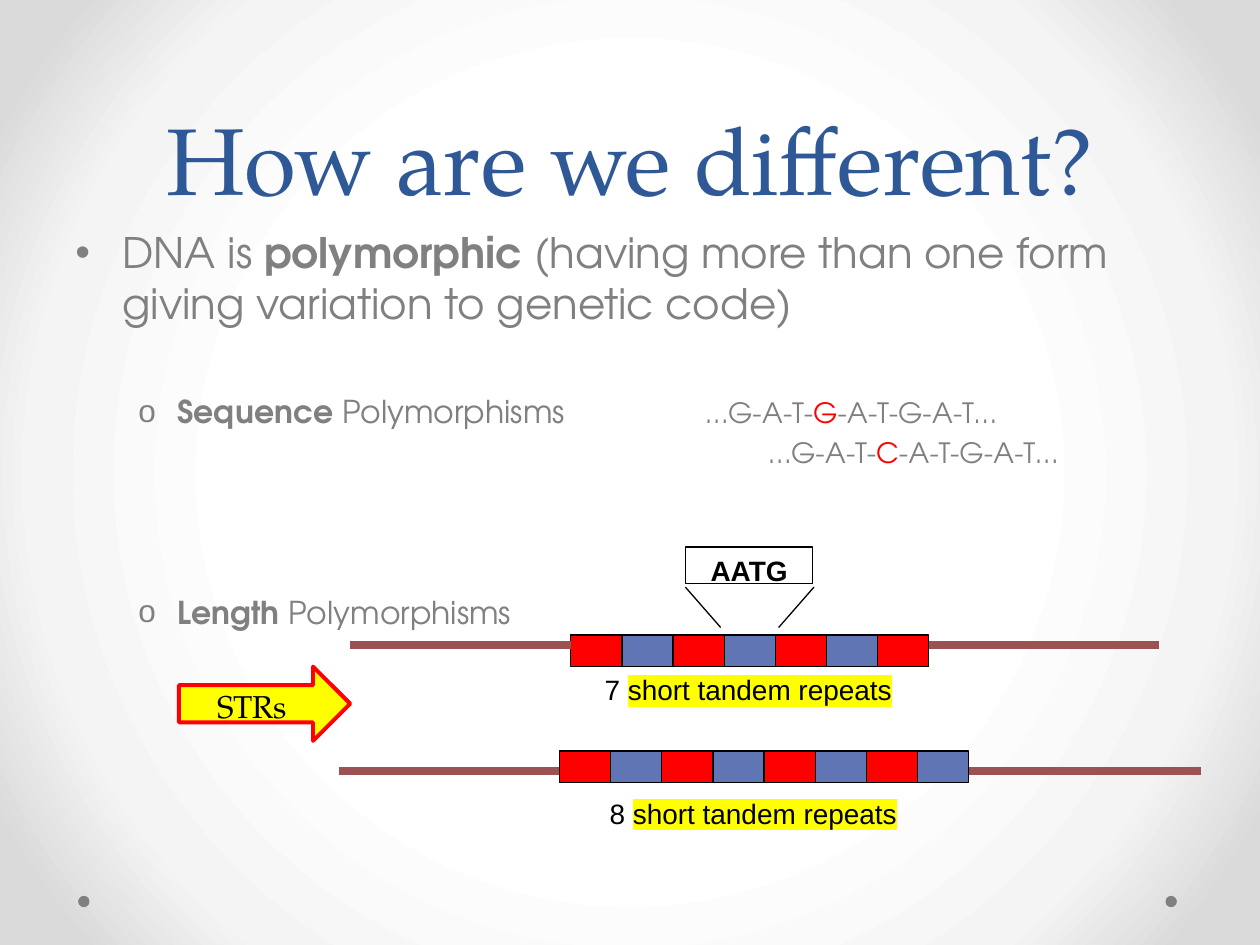
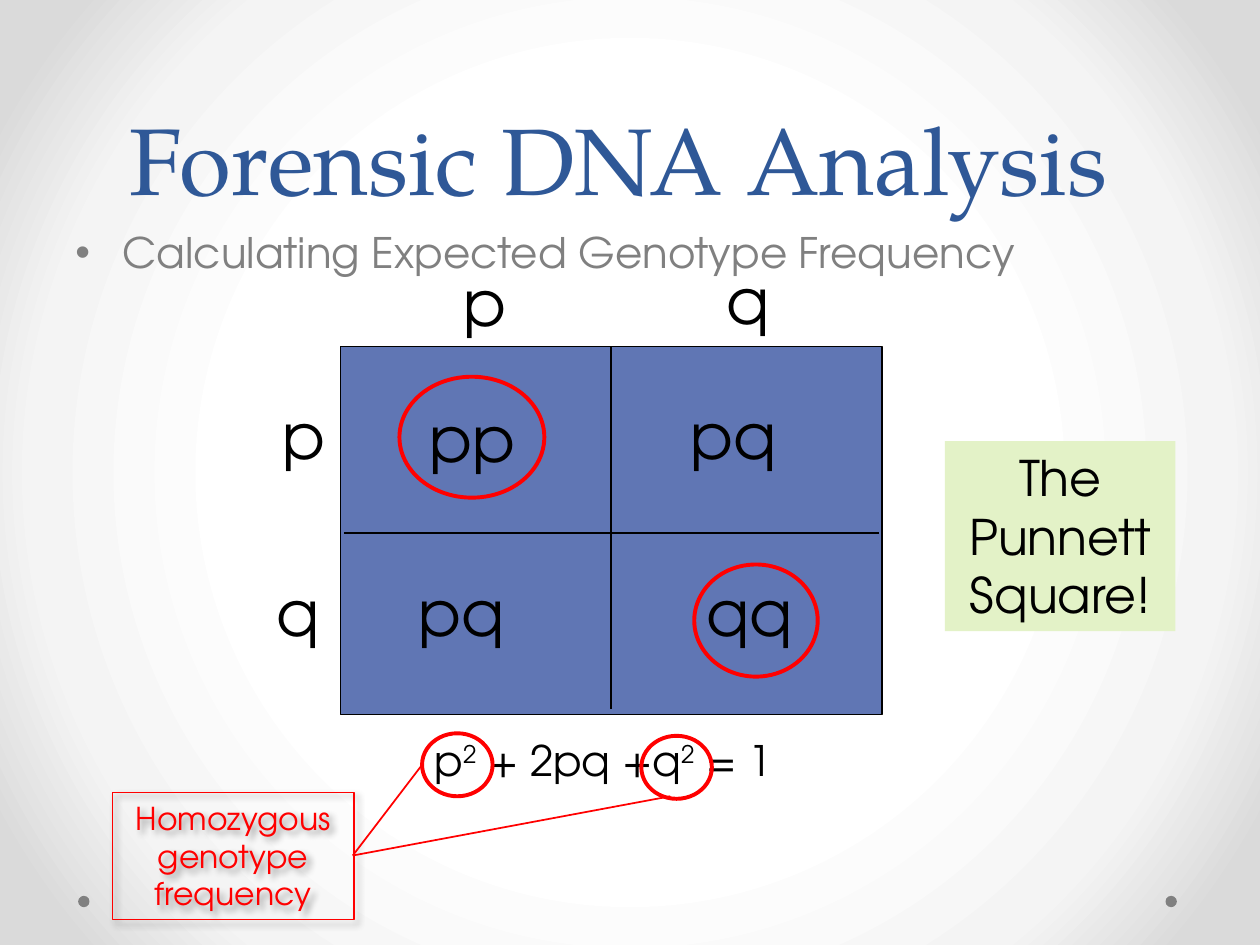
from lxml.etree import SubElement
from pptx import Presentation
from pptx.dml.color import RGBColor
from pptx.enum.shapes import MSO_CONNECTOR as Link, MSO_SHAPE as Shape
from pptx.enum.text import MSO_ANCHOR as Anchor, PP_ALIGN as Align
from pptx.oxml.ns import qn
from pptx.util import Inches, Pt

COLORS = {
    "title": "2F5897", "body": "808080", "ink": "000000", "red": "FF0000",
    "blue": "6076B4", "strand": "9C5252", "yellow": "FFFF00", "green": "E3F2C7",
    "center": "FFFFFF", "halo": "F4F4F4", "edge": "DADADA",
}
SERIF, SANS, PLAIN = "TeX Gyre Pagella", "TeX Gyre Adventor", "Arial"
COLUMNS, ROWS = 100, 75


def child(parent, tag, **attributes):
    return SubElement(parent, qn(tag), {k: str(v) for k, v in attributes.items()})


def add_text(paragraph, text, size=16, font=SANS, color="ink", bold=None,
             raised=False, highlight=None):
    run = paragraph.add_run()
    run.text = text
    run.font.size = Pt(size)
    run.font.bold = bold
    run.font.color.rgb = RGBColor.from_string(COLORS[color])
    properties = run.font._element
    if raised:
        properties.set("baseline", "30000")
    if highlight:
        child(child(properties, "a:highlight"), "a:srgbClr", val=COLORS[highlight])
    run.font.name = font


class Deck:
    """Holds the shared style, the grid and the slide being filled."""

    def __init__(self):
        self.prs = Presentation()
        self.prs.slide_width, self.prs.slide_height = Inches(10), Inches(7.5)
        self.column = self.prs.slide_width / COLUMNS
        self.row = self.prs.slide_height / ROWS
        self.slide = None
        self.paint_background()

    def paint_background(self):
        fill = self.prs.slide_master.background.fill
        fill.gradient()
        gradient = self.prs.slide_master._element.find(".//" + qn("a:gradFill"))
        for part in list(gradient):
            gradient.remove(part)
        stops = child(gradient, "a:gsLst")
        for position, color in ((50, "center"), (76, "halo"), (92, "edge")):
            stop = child(stops, "a:gs", pos=position * 1000)
            child(stop, "a:srgbClr", val=COLORS[color])
        path = child(gradient, "a:path", path="circle")
        child(path, "a:fillToRect", l=50000, t=50000, r=50000, b=50000)

    def place(self, x, y):
        return round(x * self.column), round(y * self.row)

    def new_slide(self, title):
        self.slide = self.prs.slides.add_slide(self.prs.slide_layouts[6])
        for x in (6.2, 92.5):
            self.shape(Shape.OVAL, x, 71.1, 0.9, 0.9, fill="body")
        heading = self.text(5, 0, 90, 17.5, title, size=54, font=SERIF,
                            color="title", align=Align.CENTER)
        heading.vertical_anchor = Anchor.BOTTOM
        heading.paragraphs[0].line_spacing = Pt(58)

    def shape(self, kind, x, y, width, height, fill=None, line=None, weight=0.75):
        shape = self.slide.shapes.add_shape(
            kind, *self.place(x, y), *self.place(width, height))
        shape.shadow.inherit = False
        if fill:
            shape.fill.solid()
            shape.fill.fore_color.rgb = RGBColor.from_string(COLORS[fill])
        else:
            shape.fill.background()
        if line:
            shape.line.color.rgb = RGBColor.from_string(COLORS[line])
            shape.line.width = Pt(weight)
        else:
            shape.line.fill.background()
        return shape

    def ring(self, x, y, width, height):
        self.shape(Shape.OVAL, x, y, width, height, line="red", weight=2.25)

    def line(self, start, end, color="ink", weight=0.75):
        line = self.slide.shapes.add_connector(
            Link.STRAIGHT, *self.place(*start), *self.place(*end))
        line.line.color.rgb = RGBColor.from_string(COLORS[color])
        line.line.width = Pt(weight)
        child(line._element.spPr, "a:effectLst")

    def frame(self, x, y, width, height):
        frame = self.slide.shapes.add_textbox(
            *self.place(x, y), *self.place(width, height)).text_frame
        frame.word_wrap = True
        return frame

    def text(self, x, y, width, height, text, align=Align.LEFT, **style):
        frame = self.frame(x, y, width, height)
        frame.paragraphs[0].alignment = align
        add_text(frame.paragraphs[0], text, **style)
        return frame

    def label(self, shape, text, **style):
        """Write centred text into a shape, from its top edge."""
        frame = shape.text_frame
        frame.word_wrap = True
        frame.vertical_anchor = Anchor.TOP
        frame.paragraphs[0].alignment = Align.CENTER
        add_text(frame.paragraphs[0], text, **style)

    def item(self, paragraph, *runs, size=24, before=5, margin=3.75, hang=3.75,
             bullet=None, tab=None, level=0):
        """Fill a body paragraph; each run is its text and its own format."""
        paragraph.level = level
        paragraph.space_before = Pt(before)
        properties = paragraph._p.get_or_add_pPr()
        properties.set("marL", str(round(margin * self.column)))
        properties.set("indent", str(-round(hang * self.column)))
        if bullet:
            child(properties, "a:buFont", typeface=PLAIN)
            child(properties, "a:buChar", char=bullet)
        if tab:
            child(child(properties, "a:tabLst"), "a:tab",
                  pos=round(tab * self.column), algn="l")
        for text, style in runs:
            add_text(paragraph, text, **{"size": size, "color": "body", **style})

    def strand(self, x, y, repeats, line_drop, right_flank):
        """A DNA strand with alternating repeat units between two flanks."""
        unit, left_flank = 4.06, 17.5
        for index in range(repeats):
            self.shape(Shape.RECTANGLE, x + index * unit, y, unit, 2.5,
                       fill=("red", "blue")[index % 2], line="ink")
        line_y, end = y + line_drop, x + repeats * unit
        for start, stop in ((x - left_flank, x), (end, end + right_flank)):
            self.line((start, line_y), (stop, line_y), "strand", 4.5)


def bases(variant):
    """Runs of a base sequence with its varying base in red."""
    return [("…G-A-T-", {"size": 16}),
            (variant, {"size": 16, "color": "red"}),
            ("-A-T-G-A-T…", {"size": 16})]


def polymorphism_slide(deck):
    deck.new_slide("How are we different?")
    body = deck.frame(5, 17.5, 92.5, 55)
    bold = {"bold": True}
    sub = {"size": 18, "margin": 8.1, "hang": 3.1, "bullet": "o", "level": 1}
    deck.item(body.paragraphs[0], ("DNA is ", {}), ("polymorphic", bold),
              (" (having more than one form giving variation to genetic code)", {}),
              bullet="•")
    deck.item(body.add_paragraph(), ("Sequence", bold), (" Polymorphisms", {}),
              ("\t", {"size": 16}), *bases("G"), before=37, tab=50, **sub)
    deck.item(body.add_paragraph(), *bases("C"), before=3, margin=55, hang=0, level=1)
    deck.item(body.add_paragraph(), ("Length", bold), (" Polymorphisms", {}),
              before=71, **sub)

    deck.strand(45.3, 50.4, 7, line_drop=0.8, right_flank=18.3)
    deck.strand(44.4, 59.6, 8, line_drop=1.6, right_flank=18.4)
    for x, y, count in ((47, 52.9, "7 "), (47.4, 62.7, "8 ")):
        caption = deck.text(x, y, 28.3, 3.7, count, font=PLAIN)
        add_text(caption.paragraphs[0], "short tandem repeats", font=PLAIN,
                 highlight="yellow")

    motif = deck.shape(Shape.RECTANGLE, 54.4, 43.4, 10.1, 2.9, line="ink")
    deck.label(motif, "AATG", font=PLAIN, bold=True)
    deck.line((54.4, 46.6), (57.2, 49.8))
    deck.line((64.6, 46.6), (61.8, 49.8))
    deck.shape(Shape.RIGHT_ARROW, 14.2, 52.9, 13.6, 5.9, fill="yellow",
               line="red", weight=2.25)
    deck.text(16.3, 54, 8.3, 4, "STRs", size=18, font=SERIF)


def punnett_slide(deck):
    deck.new_slide("Forensic DNA Analysis ")
    body = deck.frame(5, 17.5, 90, 49.5)
    deck.item(body.paragraphs[0], ("Calculating Expected Genotype Frequency", {}),
              bullet="•")

    deck.shape(Shape.RECTANGLE, 27, 27.5, 43, 29.2, fill="blue", line="ink")
    deck.line((27.3, 42.3), (69.8, 42.3))
    deck.line((48.5, 27.5), (48.5, 56.3))
    alleles = (("p", 35.8, 20.4), ("q", 56.7, 20.3), ("p", 21.4, 31), ("q", 21, 45))
    genotypes = (("pp", 33.1, 31.2), ("qq", 55.1, 45), ("pq", 53.8, 31), ("pq", 32.2, 45))
    for width, letters in ((6.7, alleles), (12.4, genotypes)):
        for letter, x, y in letters:
            deck.text(x, y, width, 7.1, letter, size=36)

    equation = deck.text(33.5, 57.8, 31.9, 5, "p", size=24).paragraphs[0]
    for term, raised in (("2", True), (" + 2pq +q", False), ("2", True), (" = 1", False)):
        add_text(equation, term, size=24, raised=raised)

    note = deck.shape(Shape.RECTANGLE, 8.9, 62.9, 19.2, 10.1, line="red")
    deck.label(note, "Homozygous genotype frequency", size=18, color="red")
    effects = note._element.spPr.find(qn("a:effectLst"))
    shadow = child(effects, "a:outerShdw", blurRad=Pt(4), dist=Pt(3), dir=45 * 60000)
    child(child(shadow, "a:srgbClr", val=COLORS["ink"]), "a:alpha", val=40000)

    reminder = deck.shape(Shape.RECTANGLE, 75, 35, 18.3, 15.1, fill="green")
    deck.label(reminder, "The Punnett Square!", size=28)
    for squared_term in ((33.5, 60.7), (53.2, 63.2)):
        deck.line((28, 67.9), squared_term, "red", 1)
    for ring in ((33.5, 58.2, 5.6, 5), (50.9, 58.4, 5.6, 5),
                 (31.7, 29.9, 11.5, 9.6), (55.1, 44.8, 9.8, 8.9)):
        deck.ring(*ring)


def main():
    deck = Deck()
    polymorphism_slide(deck)
    punnett_slide(deck)
    deck.prs.save("out.pptx")


if __name__ == "__main__":
    main()
